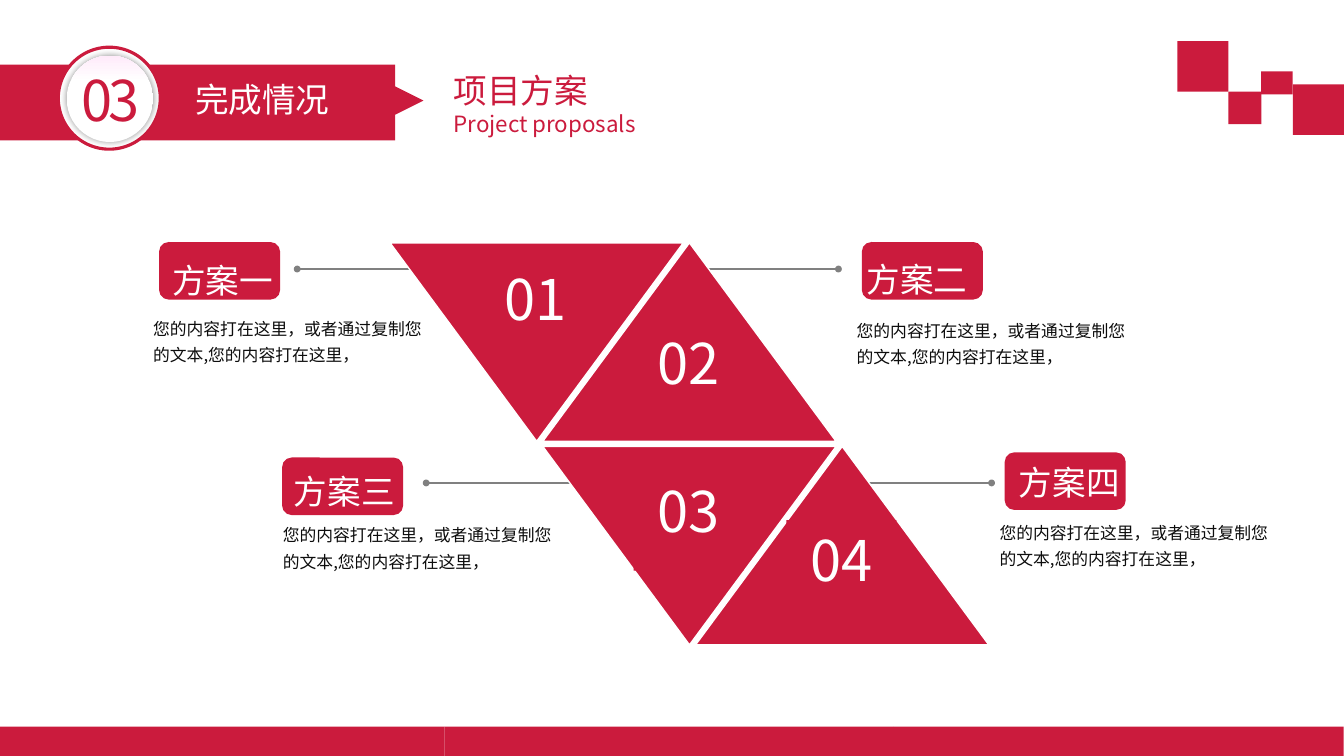
from collections import namedtuple

from lxml import etree
from pptx import Presentation
from pptx.dml.color import RGBColor
from pptx.enum.shapes import MSO_CONNECTOR, MSO_SHAPE
from pptx.enum.text import MSO_ANCHOR, MSO_AUTO_SIZE, PP_ALIGN
from pptx.oxml import parse_xml
from pptx.oxml.ns import nsdecls, qn
from pptx.util import Cm, Pt

RECTANGLE = MSO_SHAPE.RECTANGLE
ROUNDED = MSO_SHAPE.ROUNDED_RECTANGLE
TRIANGLE = MSO_SHAPE.ISOSCELES_TRIANGLE
OVAL = MSO_SHAPE.OVAL
STRAIGHT = MSO_CONNECTOR.STRAIGHT
TOP = MSO_ANCHOR.TOP
GROW = MSO_AUTO_SIZE.SHAPE_TO_FIT_TEXT
CENTER = PP_ALIGN.CENTER

COLORS = {"red": "CB1B3D", "white": "FFFFFF", "pink": "FFEBFA",
          "gray": "808080", "ink": "0D0D0D"}
FONT = "Noto Sans CJK SC"
BODY = "您的内容打在这里，或者通过复制您的文本,您的内容打在这里，"

# All lengths are in centimetres; side is the direction from dot to triangle
Plan = namedtuple("Plan", "number name column row flipped number_top "
                          "dot side line_y badge label body")
PLANS = [
    Plan("01", "方案一", 0, 0, True, 6.55, 7.49, 1, 6.78,
         (4.01, 6.1), (4.09, 6.05), (3.61, 7.75)),
    Plan("02", "方案二", 1, 0, False, 8.15, 21.13, -1, 6.78,
         (21.72, 6.1), (21.59, 6.02), (21.34, 7.8)),
    Plan("03", "方案三", 1, 1, True, 11.89, 10.74, 1, 12.17,
         (7.11, 11.53), (7.16, 11.35), (6.88, 12.95)),
    Plan("04", "方案四", 2, 1, False, 13.11, 24.99, -1, 12.17,
         (25.32, 11.4), (25.43, 11.13), (24.94, 12.88)),
]


def color(name):
    return RGBColor.from_string(COLORS[name])


class SlideBuilder:
    def __init__(self, page, font):
        self.page = page
        self.font = font

    def shape(self, kind, left, top, width, height, fill="red",
              line=None, line_width=1, rotation=0):
        shape = self.page.shapes.add_shape(
            kind, Cm(left), Cm(top), Cm(width), Cm(height))
        shape.shadow.inherit = False
        shape.rotation = rotation
        shape.fill.solid()
        shape.fill.fore_color.rgb = color(fill)
        if line:
            shape.line.color.rgb = color(line)
            shape.line.width = Pt(line_width)
        else:
            shape.line.fill.background()
        return shape

    def line(self, start, end, y):
        line = self.page.shapes.add_connector(
            STRAIGHT, Cm(start), Cm(y), Cm(end), Cm(y))
        line.line.color.rgb = color("gray")
        line.line.width = Pt(1)
        etree.SubElement(line._element.spPr, qn("a:effectLst"))

    def text(self, left, top, width, height, lines, fill, spacing=None, inset=0.13):
        box = self.page.shapes.add_textbox(
            Cm(left), Cm(top), Cm(width), Cm(height))
        frame = box.text_frame
        frame.word_wrap = True
        frame.auto_size = GROW
        frame.margin_top = frame.margin_bottom = Cm(inset)
        return self.fill_frame(frame, lines, fill, spacing)

    def fill_frame(self, frame, lines, fill, spacing=None, align=None):
        spans = []
        for index, (words, size) in enumerate(lines):
            para = frame.add_paragraph() if index else frame.paragraphs[0]
            para.line_spacing = spacing
            para.alignment = align
            span = para.add_run()
            span.text = words
            span.font.size = Pt(size)
            span.font.name = self.font
            span.font.color.rgb = color(fill)
            east_asian = etree.SubElement(span.font._element, qn("a:ea"))
            east_asian.set("typeface", self.font)
            spans.append(span)
        return spans

    def disc(self, left, top, size):
        disc = self.shape(OVAL, left, top, size, size)
        disc.fill.gradient()
        disc.fill.gradient_angle = 90
        for stop, position, name in zip(
                disc.fill.gradient_stops, (0.7, 1), ("white", "pink")):
            stop.position = position
            stop.color.rgb = color(name)
        effects = disc._element.spPr.find(qn("a:effectLst"))
        effects.append(parse_xml(
            f'<a:outerShdw {nsdecls("a")} blurRad="63500" dist="0" dir="0">'
            '<a:srgbClr val="000000"><a:alpha val="40000"/></a:srgbClr>'
            '</a:outerShdw>'))

    def pointer(self, plan):
        self.line(plan.dot, plan.dot + plan.side * 3.84, plan.line_y)
        self.shape(OVAL, plan.dot - 0.05, plan.line_y - 0.05, 0.1, 0.1,
                   "gray", "gray", 2)

    def numbered_triangle(self, plan):
        left = 9.83 + 3.85 * plan.column
        self.shape(TRIANGLE, left, 6.12 + 5.13 * plan.row, 7.39, 5, "red",
                   "white", rotation=180 if plan.flipped else 0)
        number = self.shape(RECTANGLE, left + 2.29, plan.number_top, 2.77, 2.49)
        frame = number.text_frame
        frame.word_wrap = False
        frame.auto_size = GROW
        frame.vertical_anchor = TOP
        self.fill_frame(frame, [(plan.number, 40)], "white", align=CENTER)

    def badge(self, plan):
        self.shape(ROUNDED, *plan.badge, 3.05, 1.45)
        self.text(*plan.label, 3.28, 1.37, [(plan.name, 24)], "white", 1.5, 0)


def main():
    deck = Presentation()
    deck.slide_width, deck.slide_height = Cm(33.87), Cm(19.05)
    page = deck.slides.add_slide(deck.slide_layouts[6])
    builder = SlideBuilder(page, FONT)

    # Pointers, triangles and descriptions
    for plan in PLANS:
        builder.pointer(plan)
    for plan in PLANS:
        builder.numbered_triangle(plan)
    for plan in PLANS:
        builder.text(*plan.body, 7.39, 1.52, [(BODY, 12)], "ink", 1.3)

    # Header band with section number
    builder.shape(RECTANGLE, 0, 1.63, 9.96, 1.91)
    builder.shape(TRIANGLE, 9.96, 2.18, 0.71, 0.71, rotation=90)
    builder.shape(OVAL, 1.47, 1.19, 2.57, 2.57, "white", "red", 2.25)
    builder.disc(1.68, 1.4, 2.18)
    section = builder.text(1.8, 1.52, 2.46, 1.96, [("03", 40)], "red")[0]
    section.font._element.set("spc", "-300")
    builder.text(4.67, 1.85, 5.28, 1.27, [("完成情况", 24)], "white")
    builder.text(11.18, 1.63, 7.47, 1.96,
                 [("项目方案", 24), ("Project proposals", 16)], "red")

    # Corner squares
    for square in [(32.58, 2.13, 1.29, 1.27), (29.67, 1.04, 1.29, 1.27),
                   (30.96, 2.31, 0.83, 0.82), (31.78, 1.8, 0.8, 0.58)]:
        builder.shape(RECTANGLE, *square)

    # Plan badges
    for plan in PLANS:
        builder.badge(plan)

    # Footer strips
    for index in range(3):
        builder.shape(RECTANGLE, -0.13 + 11.33 * index, 18.31, 11.33, 0.74)

    deck.save("out.pptx")


if __name__ == "__main__":
    main()
